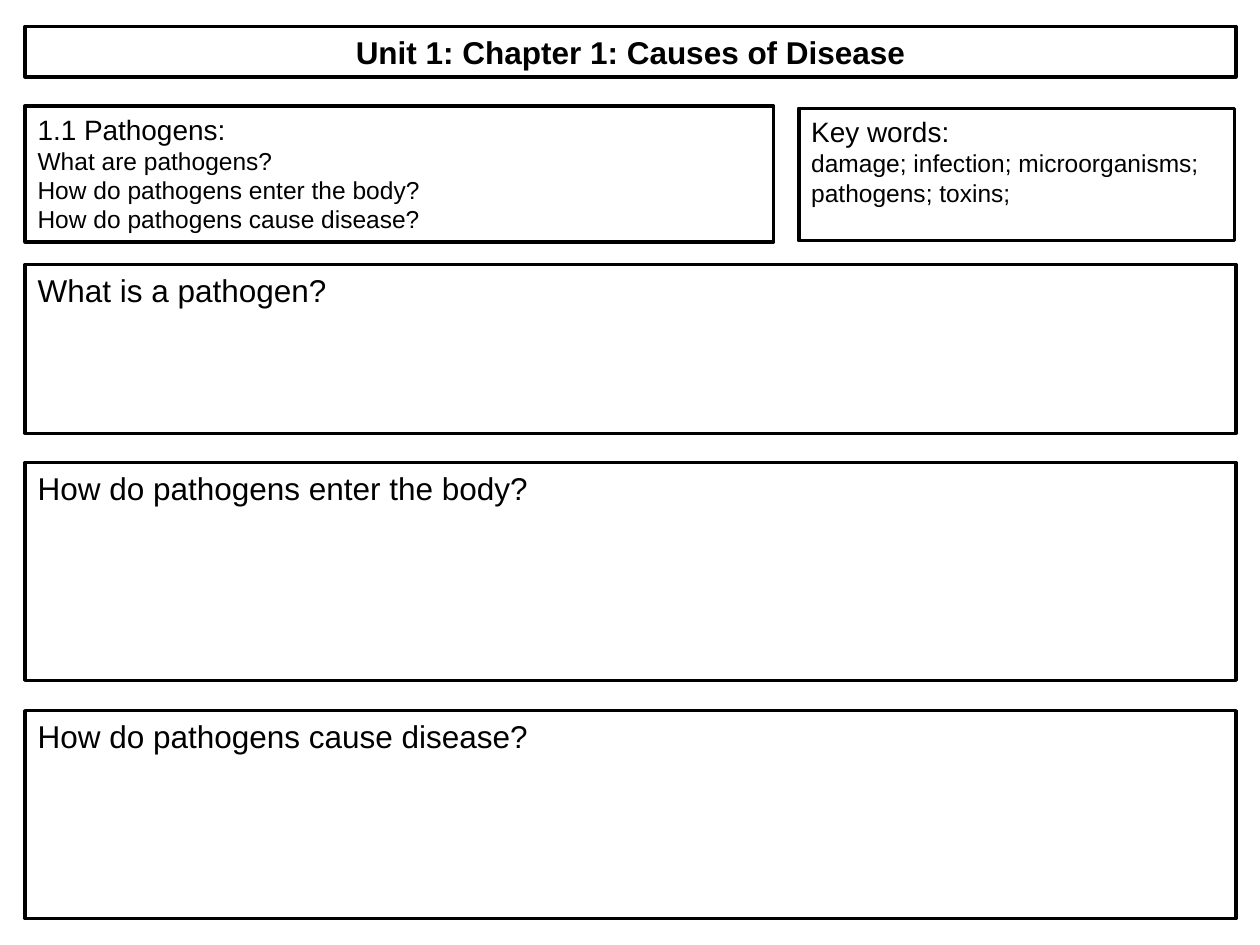
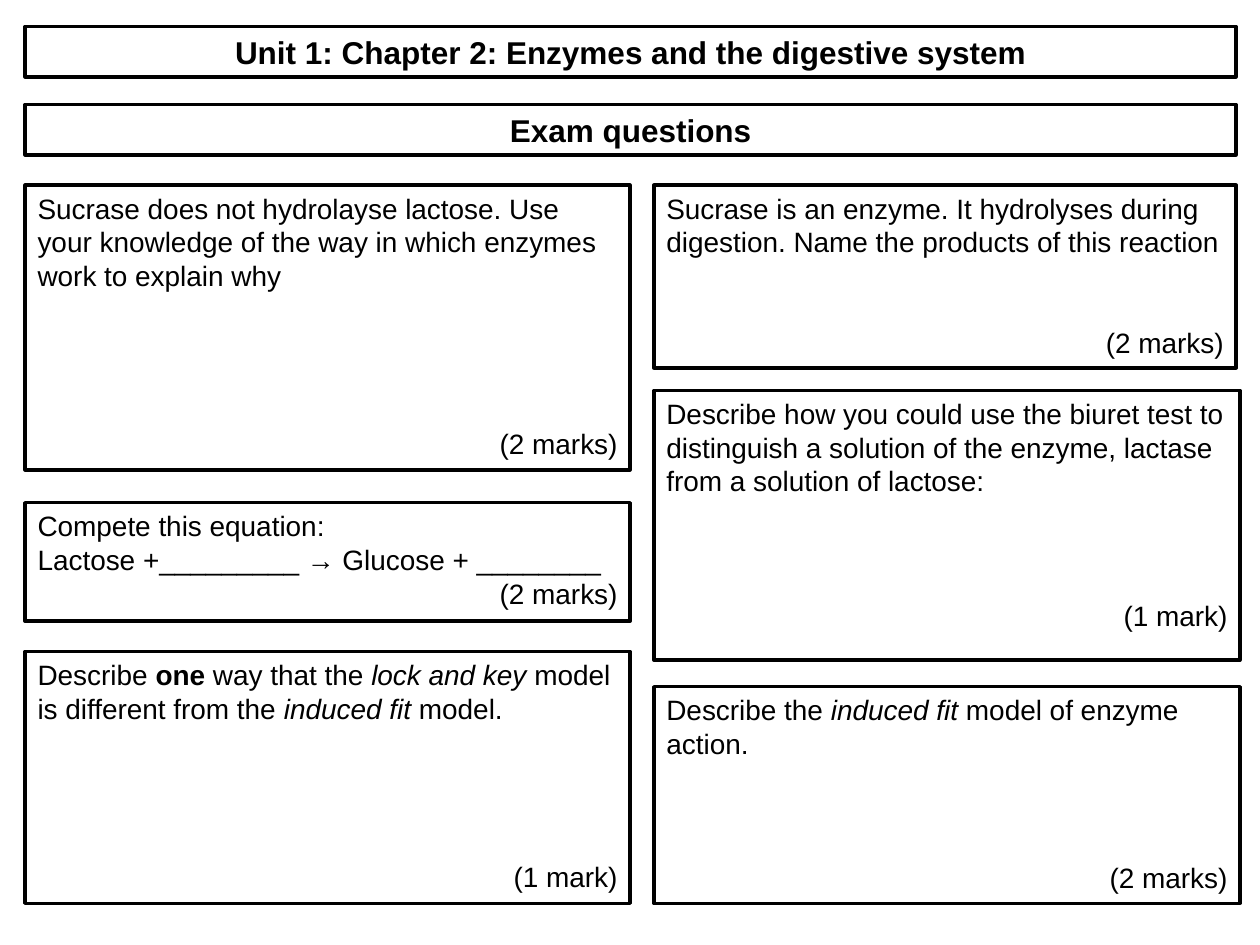
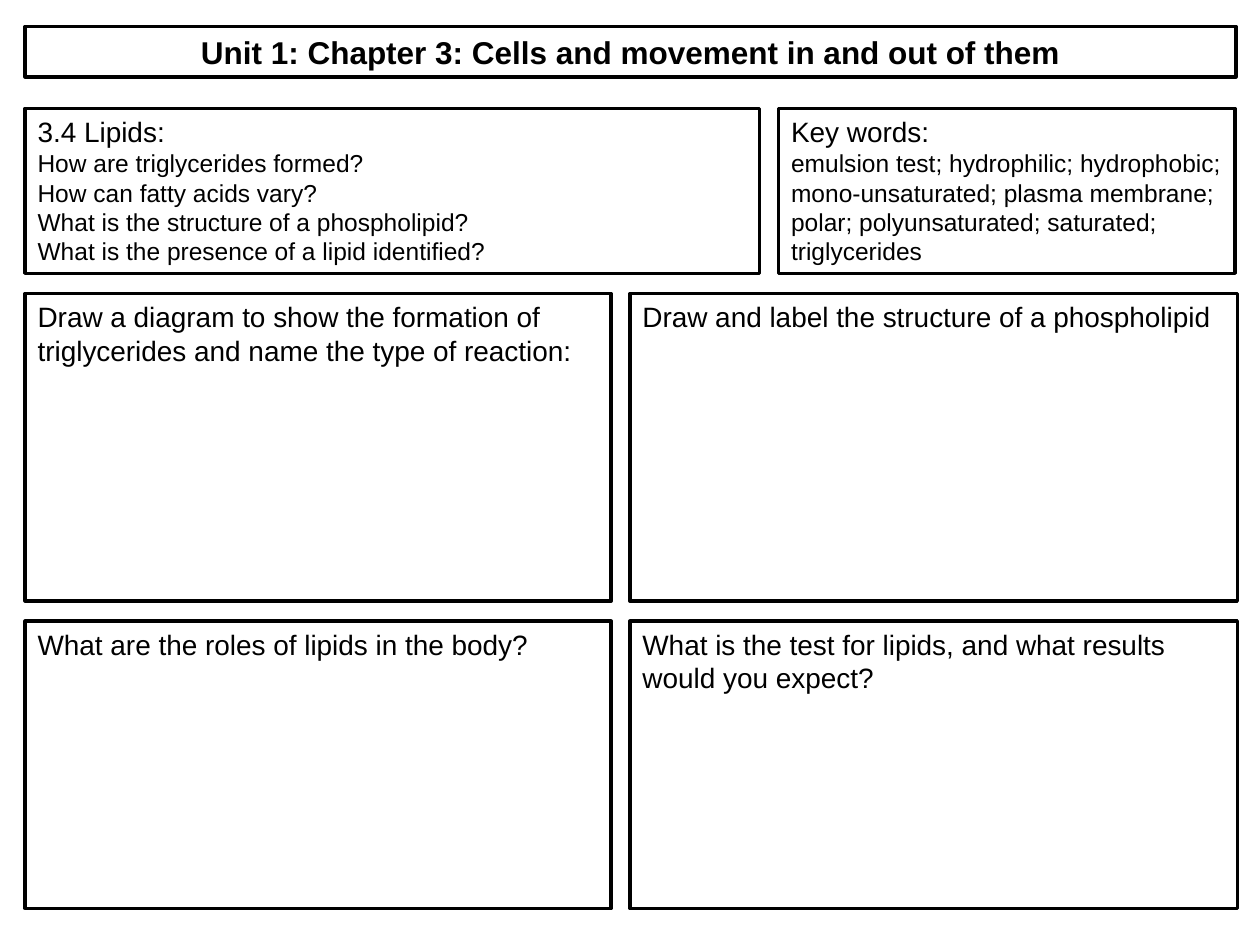
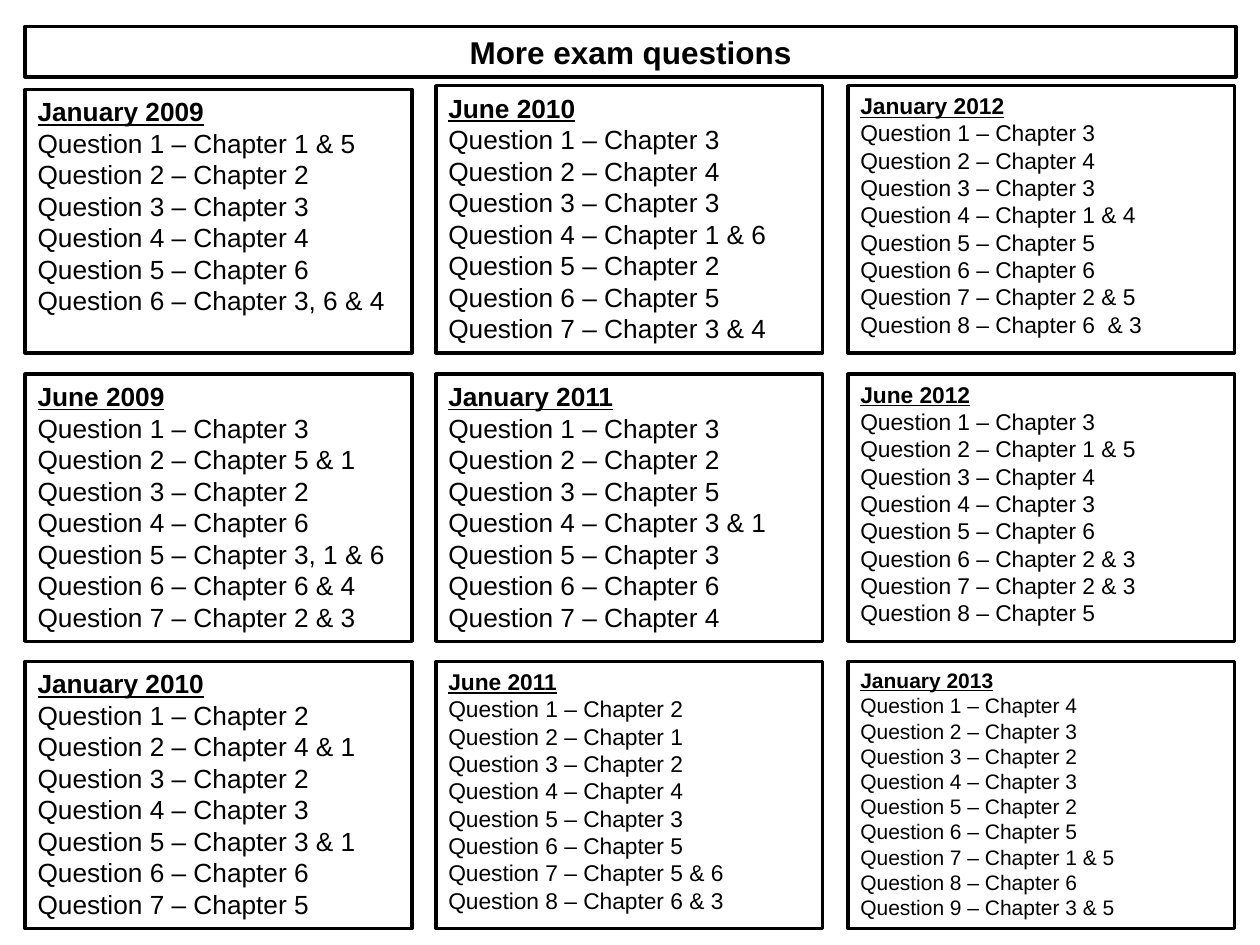
from dataclasses import dataclass

from pptx import Presentation
from pptx.dml.color import RGBColor
from pptx.enum.shapes import MSO_SHAPE
from pptx.enum.text import MSO_ANCHOR, PP_ALIGN
from pptx.slide import Slide
from pptx.text.text import TextFrame
from pptx.util import Emu, Pt

RECTANGLE = MSO_SHAPE.RECTANGLE
TOP = MSO_ANCHOR.TOP
LEFT, CENTER, RIGHT = PP_ALIGN.LEFT, PP_ALIGN.CENTER, PP_ALIGN.RIGHT
EMU_PER_PX = 9144
BLANK_LAYOUT = 6


@dataclass(frozen=True)
class Theme:
    font: str = "Arial"
    ink: RGBColor = RGBColor(0, 0, 0)
    paper: RGBColor = RGBColor(255, 255, 255)
    border: float = 2
    title: int = 18
    question: int = 16
    detail: int = 14
    line_height: float = 1.2


@dataclass(frozen=True)
class Box:
    left: int
    top: int
    width: int
    height: int


@dataclass(frozen=True)
class Span:
    text: str
    bold: bool = False
    italic: bool = False


@dataclass(frozen=True)
class Prompt:
    box: Box
    text: str | tuple[Span, ...]
    size: int


@dataclass(frozen=True)
class Topic:
    box: Box
    heading: str
    details: tuple[str, ...]


@dataclass(frozen=True)
class ExamQuestion:
    box: Box
    lines: tuple[str | tuple[Span, ...], ...]
    marks: str
    answer_lines: int


@dataclass(frozen=True)
class Paper:
    session: str
    chapters: tuple[str, ...]
    size: int
    drop: int = 0


THEME = Theme()
MARGIN, FULL_WIDTH = 20, 961
TITLE_TOP, SUBTITLE_TOP, BAND_HEIGHT = 21, 83, 40

PATHOGEN_TOPICS = (
    Topic(Box(MARGIN, 84, 594, 108), "1.1 Pathogens:", (
        "What are pathogens?",
        "How do pathogens enter the body?",
        "How do pathogens cause disease?",
    )),
    Topic(Box(634, 86, 346, 105), "Key words:", (
        "damage; infection; microorganisms; pathogens; toxins;",
    )),
)
PATHOGEN_PROMPTS = tuple(
    Prompt(Box(MARGIN, top, FULL_WIDTH, height), text, THEME.title)
    for top, height, text in (
        (210, 134, "What is a pathogen?"),
        (367, 173, "How do pathogens enter the body?"),
        (564, 165, "How do pathogens cause disease?"),
    )
)

EXAM_RIGHT, EXAM_LEFT_WIDTH, EXAM_RIGHT_WIDTH = 519, 480, 465
EXAM_QUESTIONS = (
    ExamQuestion(Box(EXAM_RIGHT, 147, 462, 145), (
        "Sucrase is an enzyme. It hydrolyses during digestion. "
        "Name the products of this reaction",
    ), "(2 marks)", 2),
    ExamQuestion(Box(MARGIN, 147, EXAM_LEFT_WIDTH, 226), (
        "Sucrase does not hydrolayse lactose. Use your knowledge of the way "
        "in which enzymes work to explain why",
    ), "(2 marks)", 4),
    ExamQuestion(Box(MARGIN, 399, EXAM_LEFT_WIDTH, 94), (
        "Compete this equation:",
        "Lactose +_________ → Glucose + ________",
    ), "(2 marks)", 0),
    ExamQuestion(Box(EXAM_RIGHT, 310, EXAM_RIGHT_WIDTH, 214), (
        "Describe how you could use the biuret test to distinguish a solution "
        "of the enzyme, lactase from a solution of lactose:",
    ), "(1 mark)", 3),
    ExamQuestion(Box(EXAM_RIGHT, 545, EXAM_RIGHT_WIDTH, 172), (
        (
            Span("Describe the "),
            Span("induced fit ", italic=True),
            Span("model of enzyme action."),
        ),
    ), "(2 marks)", 3),
    ExamQuestion(Box(MARGIN, 517, EXAM_LEFT_WIDTH, 200), (
        (
            Span("Describe "),
            Span("one ", bold=True),
            Span("way that the "),
            Span("lock and key ", italic=True),
            Span("model is different from the "),
            Span("induced fit ", italic=True),
            Span("model."),
        ),
    ), "(1 mark)", 4),
)

LIPID_TOPICS = (
    Topic(Box(MARGIN, 86, 583, 131), "3.4 Lipids:", (
        "How are triglycerides formed?",
        "How can fatty acids vary?",
        "What is the structure of a phospholipid?",
        "What is the presence of a lipid identified?",
    )),
    Topic(Box(618, 86, 362, 131), "Key words:", (
        "emulsion test; hydrophilic; hydrophobic; mono-unsaturated; plasma "
        "membrane; polar; polyunsaturated; saturated; triglycerides",
    )),
)
LIPID_COLUMNS = ((MARGIN, 465), (500, 482))
LIPID_ROWS = ((233, 244), (493, 228))
LIPID_TEXTS = (
    (
        "Draw a diagram to show the formation of triglycerides and name the "
        "type of reaction:",
        "Draw and label the structure of a phospholipid",
    ),
    (
        "What are the roles of lipids in the body?",
        "What is the test for lipids, and what results would you expect?",
    ),
)
LIPID_PROMPTS = tuple(
    Prompt(Box(left, top, width, height), text, THEME.question)
    for (top, height), texts in zip(LIPID_ROWS, LIPID_TEXTS)
    for (left, width), text in zip(LIPID_COLUMNS, texts)
)

PAPER_COLUMNS, PAPER_ROWS = (20, 346, 673), (68, 297, 525)
PAPER_WIDTH, PAPER_HEIGHT = 307, 212
PAPERS = (
    (
        Paper("January 2009", ("1 & 5", "2", "3", "4", "6", "3, 6 & 4"), 15, 3),
        Paper("June 2009", ("3", "5 & 1", "2", "6", "3, 1 & 6", "6 & 4", "2 & 3"), 15),
        Paper("January 2010", ("2", "4 & 1", "2", "3", "3 & 1", "6", "5"), 15),
    ),
    (
        Paper("June 2010", ("3", "4", "3", "1 & 6", "2", "5", "3 & 4"), 15),
        Paper("January 2011", ("3", "2", "5", "3 & 1", "3", "6", "4"), 15),
        Paper("June 2011", ("2", "1", "2", "4", "3", "5", "5 & 6", "6 & 3"), 13),
    ),
    (
        Paper("January 2012", ("3", "4", "3", "1 & 4", "5", "6", "2 & 5", "6  & 3"), 13),
        Paper("June 2012", ("3", "1 & 5", "4", "3", "6", "2 & 3", "2 & 3", "5"), 13),
        Paper("January 2013", ("4", "3", "2", "3", "2", "5", "1 & 5", "6", "3 & 5"), 12),
    ),
)


def px(length: int) -> Emu:
    return Emu(length * EMU_PER_PX)


def add_frame(slide: Slide, box: Box) -> TextFrame:
    panel = slide.shapes.add_shape(
        RECTANGLE, px(box.left), px(box.top), px(box.width), px(box.height)
    )
    panel.shadow.inherit = False
    panel.fill.solid()
    panel.fill.fore_color.rgb = THEME.paper
    panel.line.color.rgb = THEME.ink
    panel.line.width = Pt(THEME.border)
    frame = panel.text_frame
    frame.word_wrap = True
    frame.vertical_anchor = TOP
    return frame


def add_text(
    frame: TextFrame,
    text: str | tuple[Span, ...],
    *,
    size: int,
    align: PP_ALIGN = LEFT,
    bold: bool = False,
    underline: bool = False,
    lines_before: int = 0,
) -> None:
    first = frame.paragraphs[0]
    paragraph = frame.add_paragraph() if first.runs else first
    paragraph.alignment = align
    paragraph.space_before = Pt(round(lines_before * size * THEME.line_height, 1))
    spans = (Span(text, bold=bold),) if isinstance(text, str) else text
    for span in spans:
        run = paragraph.add_run()
        run.text = span.text
        run.font.name = THEME.font
        run.font.size = Pt(size)
        run.font.color.rgb = THEME.ink
        run.font.bold = span.bold
        run.font.italic = span.italic
        run.font.underline = underline


def add_band(slide: Slide, text: str, top: int = TITLE_TOP) -> None:
    frame = add_frame(slide, Box(MARGIN, top, FULL_WIDTH, BAND_HEIGHT))
    add_text(frame, text, size=THEME.title, align=CENTER, bold=True)


def add_topic(slide: Slide, topic: Topic) -> None:
    frame = add_frame(slide, topic.box)
    add_text(frame, topic.heading, size=THEME.question)
    for detail in topic.details:
        add_text(frame, detail, size=THEME.detail)


def add_prompt(slide: Slide, prompt: Prompt) -> None:
    add_text(add_frame(slide, prompt.box), prompt.text, size=prompt.size)


def add_exam_question(slide: Slide, question: ExamQuestion) -> None:
    frame = add_frame(slide, question.box)
    for line in question.lines:
        add_text(frame, line, size=THEME.question)
    add_text(
        frame, question.marks, size=THEME.question, align=RIGHT,
        lines_before=question.answer_lines,
    )


def add_paper(slide: Slide, paper: Paper, left: int, top: int) -> None:
    box = Box(left, top + paper.drop, PAPER_WIDTH, PAPER_HEIGHT - paper.drop)
    frame = add_frame(slide, box)
    add_text(frame, paper.session, size=paper.size, bold=True, underline=True)
    for number, chapter in enumerate(paper.chapters, start=1):
        add_text(frame, f"Question {number} – Chapter {chapter}", size=paper.size)


def add_titled_slide(deck: Presentation, title: str) -> Slide:
    slide = deck.slides.add_slide(deck.slide_layouts[BLANK_LAYOUT])
    add_band(slide, title)
    return slide


def add_revision_slide(
    deck: Presentation,
    title: str,
    topics: tuple[Topic, ...],
    prompts: tuple[Prompt, ...],
) -> None:
    slide = add_titled_slide(deck, title)
    for topic in topics:
        add_topic(slide, topic)
    for prompt in prompts:
        add_prompt(slide, prompt)


def add_exam_slide(deck: Presentation) -> None:
    slide = add_titled_slide(
        deck, "Unit 1: Chapter 2: Enzymes and the digestive system"
    )
    add_band(slide, "Exam questions", SUBTITLE_TOP)
    for question in EXAM_QUESTIONS:
        add_exam_question(slide, question)


def add_papers_slide(deck: Presentation) -> None:
    slide = add_titled_slide(deck, "More exam questions")
    for left, column in zip(PAPER_COLUMNS, PAPERS):
        for top, paper in zip(PAPER_ROWS, column):
            add_paper(slide, paper, left, top)


def main() -> None:
    deck = Presentation()
    deck.slide_width, deck.slide_height = px(1000), px(750)
    add_revision_slide(
        deck, "Unit 1: Chapter 1: Causes of Disease",
        PATHOGEN_TOPICS, PATHOGEN_PROMPTS,
    )
    add_exam_slide(deck)
    add_revision_slide(
        deck, "Unit 1: Chapter 3: Cells and movement in and out of them",
        LIPID_TOPICS, LIPID_PROMPTS,
    )
    add_papers_slide(deck)
    deck.save("out.pptx")


if __name__ == "__main__":
    main()
